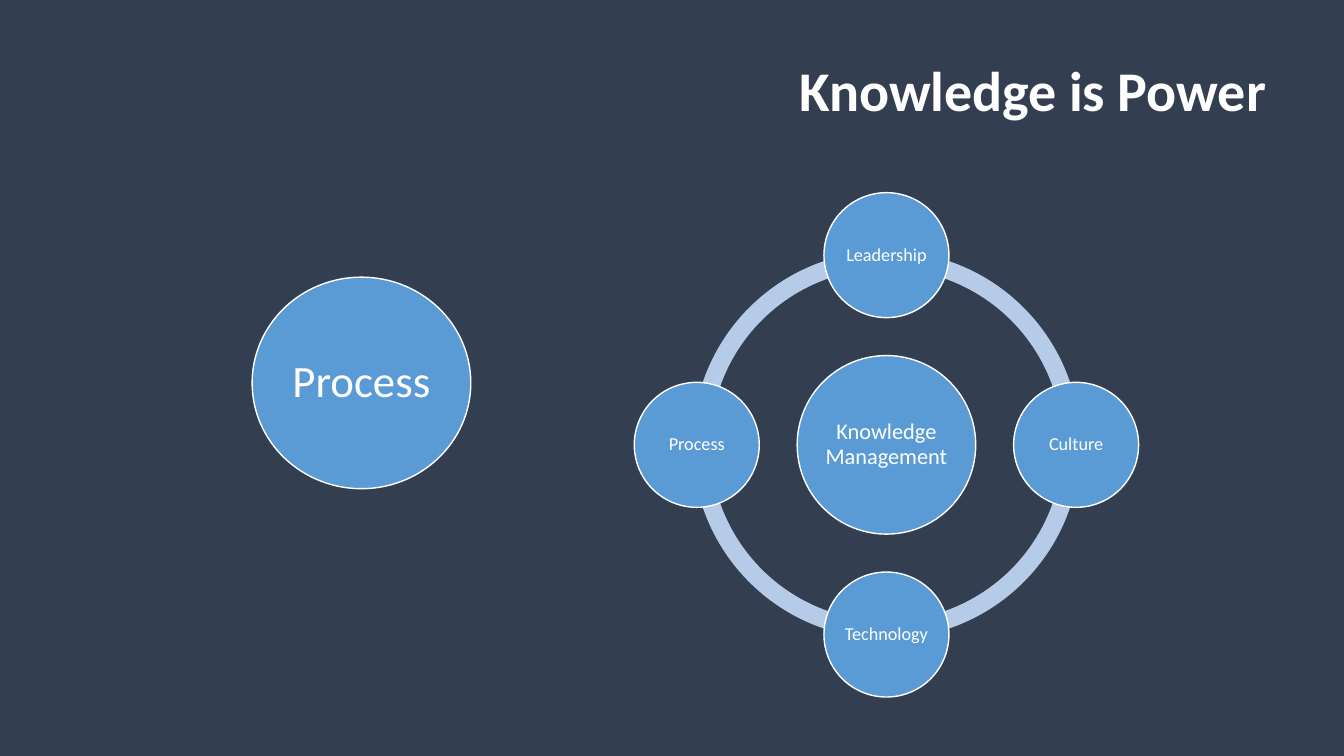
from dataclasses import dataclass
from math import cos, radians, sin

from pptx import Presentation
from pptx.dml.color import RGBColor
from pptx.enum.shapes import MSO_SHAPE
from pptx.enum.text import MSO_ANCHOR, PP_ALIGN
from pptx.util import Cm, Pt

OVAL, ARC = MSO_SHAPE.OVAL, MSO_SHAPE.BLOCK_ARC
MIDDLE = MSO_ANCHOR.MIDDLE
CENTER, RIGHT = PP_ALIGN.CENTER, PP_ALIGN.RIGHT


@dataclass(frozen=True)
class Theme:
    font: str = "Calibri"
    back: RGBColor = RGBColor(0x33, 0x3F, 0x50)
    disc: RGBColor = RGBColor(0x5B, 0x9B, 0xD5)
    ring: RGBColor = RGBColor(0xB5, 0xCB, 0xE7)
    text: RGBColor = RGBColor(0xFF, 0xFF, 0xFF)
    title: int = 40
    lead: int = 32
    hub: int = 16
    node: int = 13


def apply(target, values):
    for name, value in values.items():
        setattr(target, name, value)


class Board:
    def __init__(self, slide, theme):
        self.slide, self.theme = slide, theme
        self.host = slide.shapes
        fill = slide.background.fill
        fill.solid()
        fill.fore_color.rgb = theme.back

    def group(self):
        self.host = self.slide.shapes.add_group_shape().shapes

    def label(self, shape, text, size, align, inset, bold=False):
        frame = shape.text_frame
        apply(frame, {"word_wrap": True, "vertical_anchor": MIDDLE, **inset})
        para = frame.paragraphs[0]
        apply(para, {"text": text, "alignment": align, "line_spacing": 0.9})
        font = para.runs[0].font
        apply(font, {"name": self.theme.font, "size": Pt(size), "bold": bold})
        font.color.rgb = self.theme.text

    def title(self, text, left, top, width, height):
        box = self.slide.shapes.add_textbox(
            Cm(left), Cm(top), Cm(width), Cm(height))
        self.label(box, text, self.theme.title, RIGHT, {}, bold=True)

    def shape(self, kind, x, y, width, height, color):
        """Add a filled shape centred on (x, y)."""
        shape = self.host.add_shape(
            kind, Cm(x - width / 2), Cm(y - height / 2), Cm(width), Cm(height))
        shape.shadow.inherit = False
        shape.fill.solid()
        shape.fill.fore_color.rgb = color
        return shape

    def arc(self, x, y, size, start, sweep, band):
        shape = self.shape(ARC, x, y, size, size, self.theme.ring)
        shape.line.fill.background()
        # Angles are stored in 60000ths of a degree, adjustments in 100000ths
        ends = (start % 360, (start + sweep) % 360)
        for index, value in enumerate([end * 0.6 for end in ends] + [band]):
            shape.adjustments[index] = value

    def disc(self, text, x, y, width, height, size):
        shape = self.shape(OVAL, x, y, width, height, self.theme.disc)
        shape.line.color.rgb = self.theme.text
        shape.line.width = Pt(1)
        sides = ("left", "right", "top", "bottom")
        inset = {f"margin_{side}": Cm(0.05) for side in sides}
        self.label(shape, text, size, CENTER, inset)


def main():
    deck = Presentation()
    apply(deck, {"slide_width": Cm(33.87), "slide_height": Cm(19.05)})
    theme = Theme()
    board = Board(deck.slides.add_slide(deck.slide_layouts[6]), theme)

    # Title
    board.title("Knowledge is Power", 8.74, 0.76, 23.42, 3.18)

    # Ring around the hub
    x, y, orbit = 22.34, 11.21, 4.78
    nodes = ("Leadership", "Culture", "Technology", "Process")
    step = 360 / len(nodes)
    angles = [-90 + step * index for index in range(len(nodes))]
    board.group()
    for angle in reversed(angles):
        board.arc(x, y, 9.78, angle, step, 0.046)
    board.disc("Knowledge Management", x, y, 4.5, 4.5, theme.hub)

    # Nodes on the ring
    for text, angle in zip(nodes, angles):
        turn = radians(angle)
        board.disc(text, x + orbit * cos(turn), y + orbit * sin(turn),
                   3.15, 3.15, theme.node)

    # Lead topic
    board.group()
    board.disc("Process", 9.11, 9.65, 5.51, 5.33, theme.lead)

    deck.save("out.pptx")


if __name__ == "__main__":
    main()
